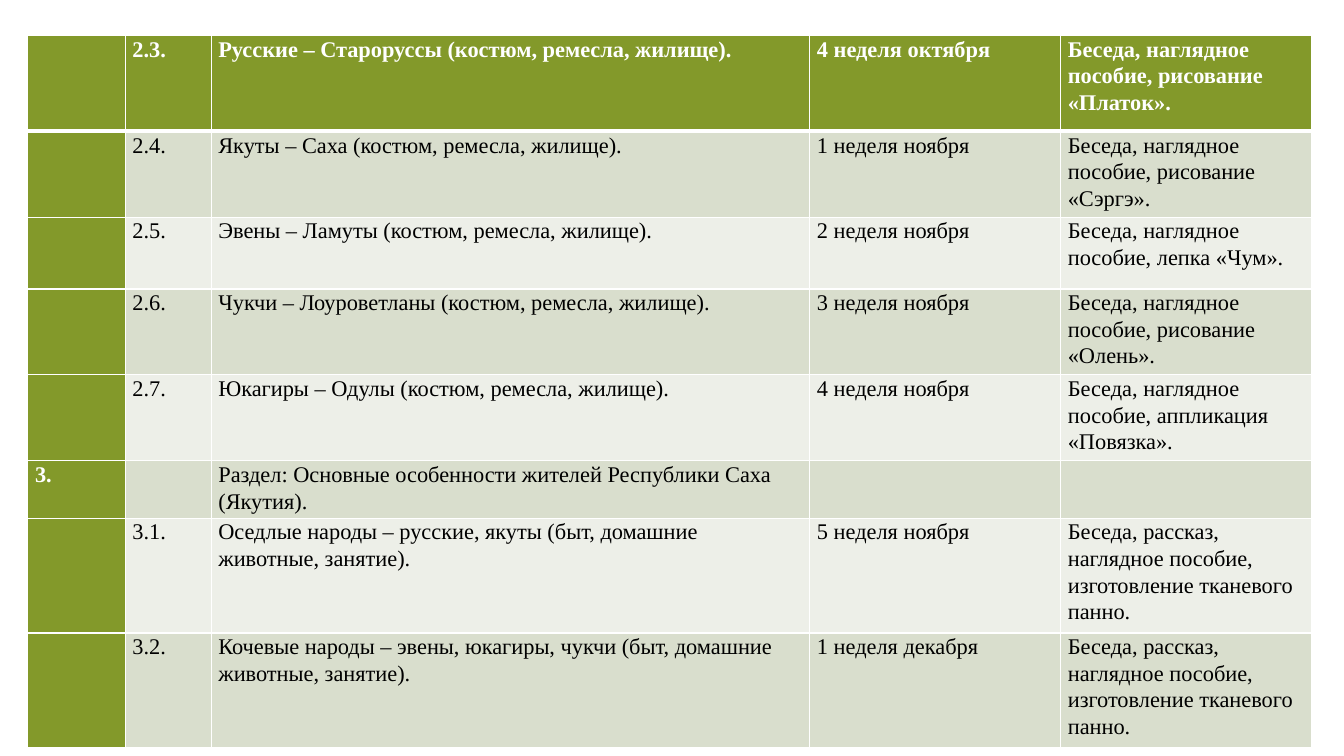
from dataclasses import dataclass

from lxml import etree
from pptx import Presentation
from pptx.dml.color import RGBColor
from pptx.oxml.ns import qn
from pptx.util import Pt

BLANK_LAYOUT = 6


@dataclass(frozen=True)
class Theme:
    accent: RGBColor = RGBColor(0x83, 0x99, 0x2A)
    band_dark: RGBColor = RGBColor(0xD9, 0xDE, 0xCD)
    band_light: RGBColor = RGBColor(0xED, 0xEF, 0xE8)
    white: RGBColor = RGBColor(0xFF, 0xFF, 0xFF)
    black: RGBColor = RGBColor(0, 0, 0)
    font: str = "Times New Roman"
    body_size: float = 16
    line_spacing: float = 1.07
    grid_width: float = 1
    header_rule_width: float = 3
    side_margin: float = 5.2


THEME = Theme()

COLUMN_WIDTHS = [69.6, 61.4, 427.6, 179.2, 179.2]

# Row height, then section, number, topic, week and activity
PLAN = [
    (68.4, "", "2.3.", "Русские – Староруссы (костюм, ремесла, жилище).",
     "4 неделя октября", "Беседа, наглядное пособие, рисование «Платок»."),
    (61.4, "", "2.4.", "Якуты – Саха (костюм, ремесла, жилище).",
     "1 неделя ноября", "Беседа, наглядное пособие, рисование «Сэргэ»."),
    (51.2, "", "2.5.", "Эвены – Ламуты (костюм, ремесла, жилище).",
     "2 неделя ноября", "Беседа, наглядное пособие, лепка «Чум»."),
    (61.4, "", "2.6.", "Чукчи – Лоуроветланы (костюм, ремесла, жилище).",
     "3 неделя ноября", "Беседа, наглядное пособие, рисование «Олень»."),
    (61.4, "", "2.7.", "Юкагиры – Одулы (костюм, ремесла, жилище).",
     "4 неделя ноября", "Беседа, наглядное пособие, аппликация «Повязка»."),
    (41, "3.", "", "Раздел: Основные особенности жителей Республики Саха (Якутия).",
     "", ""),
    (82, "", "3.1.", "Оседлые народы – русские, якуты (быт, домашние животные, занятие).",
     "5 неделя ноября",
     "Беседа, рассказ, наглядное пособие, изготовление тканевого панно."),
    (82, "", "3.2.",
     "Кочевые народы – эвены, юкагиры, чукчи (быт, домашние животные, занятие).",
     "1 неделя декабря",
     "Беседа, рассказ, наглядное пособие, изготовление тканевого панно."),
]


def set_borders(cell, top, bottom):
    """Draw white rules round a cell; top and bottom are widths in points."""
    properties = cell._tc.get_or_add_tcPr()
    widths = {"a:lnL": THEME.grid_width, "a:lnR": THEME.grid_width,
              "a:lnT": top, "a:lnB": bottom}
    for tag, width in widths.items():
        line = etree.SubElement(properties, qn(tag), w=str(Pt(width)))
        fill = etree.SubElement(line, qn("a:solidFill"))
        etree.SubElement(fill, qn("a:srgbClr"), val=str(THEME.white))


def format_cell(cell, text, fill, emphasised):
    cell.margin_left = cell.margin_right = Pt(THEME.side_margin)
    cell.margin_top = cell.margin_bottom = 0
    cell.fill.solid()
    cell.fill.fore_color.rgb = fill
    cell.text = text
    paragraph = cell.text_frame.paragraphs[0]
    paragraph.line_spacing = THEME.line_spacing
    font = paragraph.font
    font.name = THEME.font
    font.size = Pt(THEME.body_size)
    font.bold = emphasised
    font.color.rgb = THEME.white if emphasised else THEME.black


def add_plan_table(slide, left, top):
    heights = [row[0] for row in PLAN]
    plan = slide.shapes.add_table(
        len(PLAN), len(COLUMN_WIDTHS), Pt(left), Pt(top),
        Pt(sum(COLUMN_WIDTHS)), Pt(sum(heights))).table
    for column, width in zip(plan.columns, COLUMN_WIDTHS):
        column.width = Pt(width)
    for r, (height, *texts) in enumerate(PLAN):
        plan.rows[r].height = Pt(height)
        band = THEME.band_dark if r % 2 else THEME.band_light
        top_rule = THEME.header_rule_width if r == 1 else THEME.grid_width
        bottom_rule = THEME.header_rule_width if r == 0 else THEME.grid_width
        for c, text in enumerate(texts):
            emphasised = r == 0 or c == 0
            cell = plan.cell(r, c)
            set_borders(cell, top_rule, bottom_rule)
            format_cell(cell, text, THEME.accent if emphasised else band, emphasised)


def main():
    deck = Presentation()
    deck.slide_width, deck.slide_height = Pt(960), Pt(540)
    slide = deck.slides.add_slide(deck.slide_layouts[BLANK_LAYOUT])
    add_plan_table(slide, left=19.8, top=25.4)
    deck.save("out.pptx")


if __name__ == "__main__":
    main()
